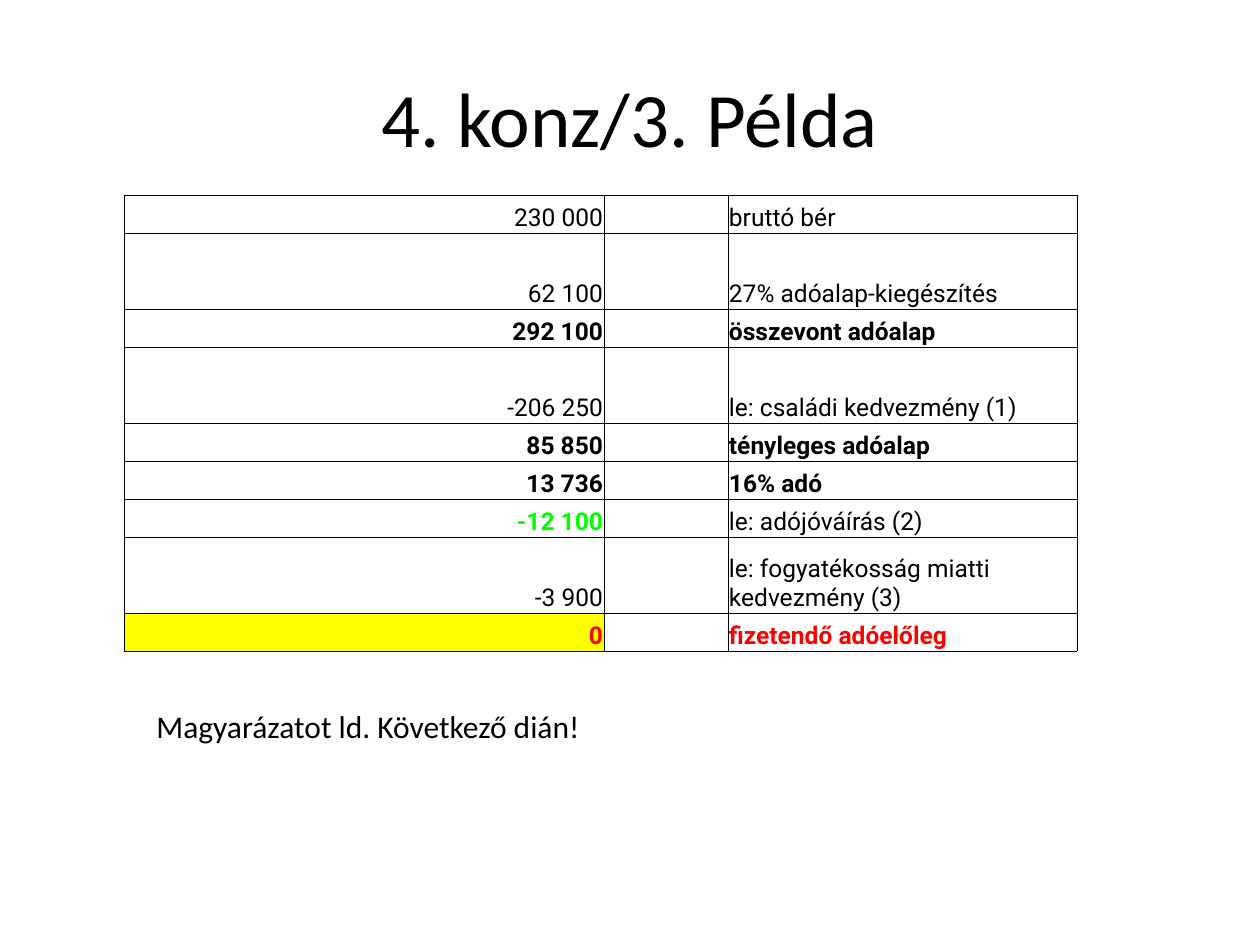
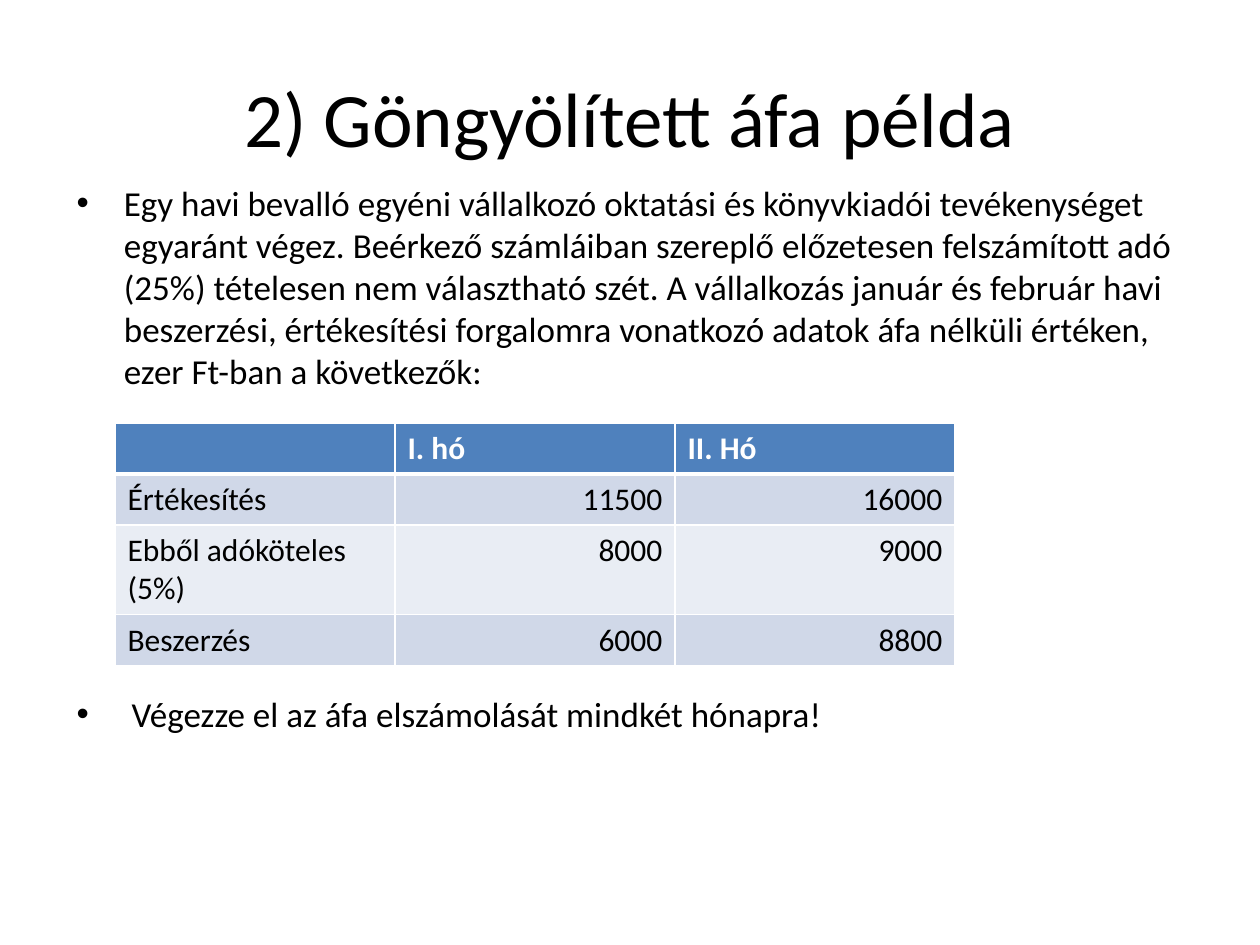
from lxml.etree import SubElement
from pptx import Presentation
from pptx.dml.color import RGBColor
from pptx.enum.text import MSO_ANCHOR, MSO_AUTO_SIZE, PP_ALIGN
from pptx.oxml.ns import qn
from pptx.util import Pt

EMU_PER_PX = 914400 / 126
COLOURS = {
    "black": "000000", "white": "FFFFFF", "green": "00FF00", "red": "FF0000",
    "yellow": "FFFF00", "blue": "4F81BD", "band": "D0D8E8", "pale": "E9EDF4",
}
TITLE_BOX = (63, 38, 1134, 157)
TITLE_FORMAT = {"size": Pt(44), "name": "Calibri"}
BODY_FORMAT = {"size": Pt(20), "name": "Calibri"}
NOTE_FORMAT = {"size": Pt(18), "name": "Calibri"}
TAX_FORMAT = {"size": Pt(14), "name": "Roboto"}
TITLE_AND_BODY, TITLE_ONLY = 1, 5


def px(length):
    return round(length * EMU_PER_PX)


def colour(name):
    return RGBColor.from_string(COLOURS[name])


class Deck:
    """Holds the presentation, its style and the current slide."""

    def __init__(self):
        self.presentation = Presentation()
        self.presentation.slide_width = px(1260)
        self.presentation.slide_height = px(945)
        self.slide = None

    def place(self, shape, box):
        names = ("left", "top", "width", "height")
        for name, length in zip(names, box):
            setattr(shape, name, px(length))

    def add_text(self, paragraph, text, formats, ink="black", align=PP_ALIGN.LEFT):
        paragraph.alignment = align
        if not text:
            # Keep an empty line as small as the text beside it
            SubElement(paragraph._p, qn("a:endParaRPr"),
                       sz=str(int(formats["size"].pt * 100)))
            return
        run = paragraph.add_run()
        run.text = text
        for name, value in formats.items():
            setattr(run.font, name, value)
        run.font.color.rgb = colour(ink)

    def add_slide(self, layout, title):
        layouts = self.presentation.slide_layouts
        self.slide = self.presentation.slides.add_slide(layouts[layout])
        shape = self.slide.shapes.title
        self.place(shape, TITLE_BOX)
        frame = shape.text_frame
        frame.auto_size = MSO_AUTO_SIZE.NONE
        frame.vertical_anchor = MSO_ANCHOR.MIDDLE
        self.add_text(frame.paragraphs[0], title, TITLE_FORMAT, align=PP_ALIGN.CENTER)

    def bullets(self, box, texts, gap):
        shape = self.slide.placeholders[1]
        self.place(shape, box)
        frame = shape.text_frame
        frame.auto_size = MSO_AUTO_SIZE.NONE
        for index, text in enumerate(texts):
            paragraph = frame.add_paragraph() if index else frame.paragraphs[0]
            paragraph.space_before = Pt(gap if index else 0)
            self.add_text(paragraph, text, BODY_FORMAT)

    def note(self, box, text):
        shape = self.slide.shapes.add_textbox(*map(px, box))
        shape.text_frame.word_wrap = True
        self.add_text(shape.text_frame.paragraphs[0], text, NOTE_FORMAT)

    def table(self, left, top, widths, heights):
        box = (left, top, sum(widths), sum(heights))
        shape = self.slide.shapes.add_table(
            len(heights), len(widths), *map(px, box))
        table = shape.table
        table.first_row = table.horz_banding = False
        for column, width in zip(table.columns, widths):
            column.width = px(width)
        for row, height in zip(table.rows, heights):
            row.height = px(height)
        return table

    def cell(self, cell, text, formats, ink="black", align=PP_ALIGN.LEFT,
             fill=None, line="black", widths=(0.5, 0.5, 0.5, 0.5), layout=None):
        for name, value in (layout or {}).items():
            setattr(cell, name, value)
        self.add_text(cell.text_frame.paragraphs[0], text, formats, ink, align)
        properties = cell._tc.get_or_add_tcPr()
        for side, width in zip("LRTB", widths):
            border = SubElement(properties, qn(f"a:ln{side}"), w=str(Pt(width)))
            solid = SubElement(border, qn("a:solidFill"))
            SubElement(solid, qn("a:srgbClr"), val=COLOURS[line])
        if fill:
            cell.fill.solid()
            cell.fill.fore_color.rgb = colour(fill)
        else:
            cell.fill.background()


def tax_slide(deck):
    deck.add_slide(TITLE_ONLY, "4. konz/3. Példa")

    # Tax calculation: amount, label, height in lines, bold, amount and label colour
    rows = [
        ("230 000", "bruttó bér", 1, (False, False), ("black", "black")),
        ("62 100", "27% adóalap-kiegészítés", 2, (False, False), ("black", "black")),
        ("292 100", "összevont adóalap", 1, (True, True), ("black", "black")),
        ("-206 250", "le: családi kedvezmény (1)", 2, (False, False), ("black", "black")),
        ("85 850", "tényleges adóalap", 1, (True, True), ("black", "black")),
        ("13 736", "16% adó", 1, (True, True), ("black", "black")),
        ("-12 100", "le: adójóváírás (2)", 1, (True, False), ("green", "black")),
        ("-3 900", "le: fogyatékosság miatti kedvezmény (3)", 2,
         (False, False), ("black", "black")),
        ("0", "fizetendő adóelőleg", 1, (True, True), ("red", "red")),
    ]
    layout = {"margin_left": px(1), "margin_right": px(1), "margin_top": px(1),
              "margin_bottom": 0, "vertical_anchor": MSO_ANCHOR.BOTTOM}
    table = deck.table(124, 195, (480, 124, 349), [38 * row[2] for row in rows])
    for index, (amount, label, _, bold, inks) in enumerate(rows):
        amount_cell, gap_cell, label_cell = table.rows[index].cells
        last = index == len(rows) - 1
        deck.cell(amount_cell, amount, {**TAX_FORMAT, "bold": bold[0]}, inks[0],
                  PP_ALIGN.RIGHT, "yellow" if last else None, layout=layout)
        deck.cell(gap_cell, "", TAX_FORMAT, layout=layout)
        deck.cell(label_cell, label, {**TAX_FORMAT, "bold": bold[1]}, inks[1],
                  layout=layout)

    deck.note((144, 701, 1032, 50), "Magyarázatot ld. Következő dián!")


def vat_slide(deck):
    deck.add_slide(TITLE_AND_BODY, "2) Göngyölített áfa példa")

    # Task text, with room for the table between the two bullets
    deck.bullets((64, 175, 1134, 624), [
        "Egy havi bevalló egyéni vállalkozó oktatási és könyvkiadói tevékenységet "
        "egyaránt végez. Beérkező számláiban szereplő előzetesen felszámított adó "
        "(25%) tételesen nem választható szét. A vállalkozás január és február havi "
        "beszerzési, értékesítési forgalomra vonatkozó adatok áfa nélküli értéken, "
        "ezer Ft-ban a következők:",
        " Végezze el az áfa elszámolását mindkét hónapra!",
    ], gap=172)

    # Monthly turnover
    rows = [
        ("", "I. hó", "II. Hó"),
        ("Értékesítés", "11500", "16000"),
        ("Ebből adóköteles (5%)", "8000", "9000"),
        ("Beszerzés", "6000", "8800"),
    ]
    table = deck.table(115, 423, (280, 280, 280), (51, 51, 89, 51))
    for row, texts in enumerate(rows):
        header = row == 0
        fill = "blue" if header else ("pale", "band")[row % 2]
        widths = (1, 1, 3 if row == 1 else 1, 3 if header else 1)
        for column, text in enumerate(texts):
            number = column and not header
            deck.cell(table.cell(row, column), text, {**NOTE_FORMAT, "bold": header},
                      "white" if header else "black",
                      PP_ALIGN.RIGHT if number else PP_ALIGN.LEFT,
                      fill, "white", widths)


def main():
    deck = Deck()
    tax_slide(deck)
    vat_slide(deck)
    deck.presentation.save("out.pptx")


if __name__ == "__main__":
    main()
